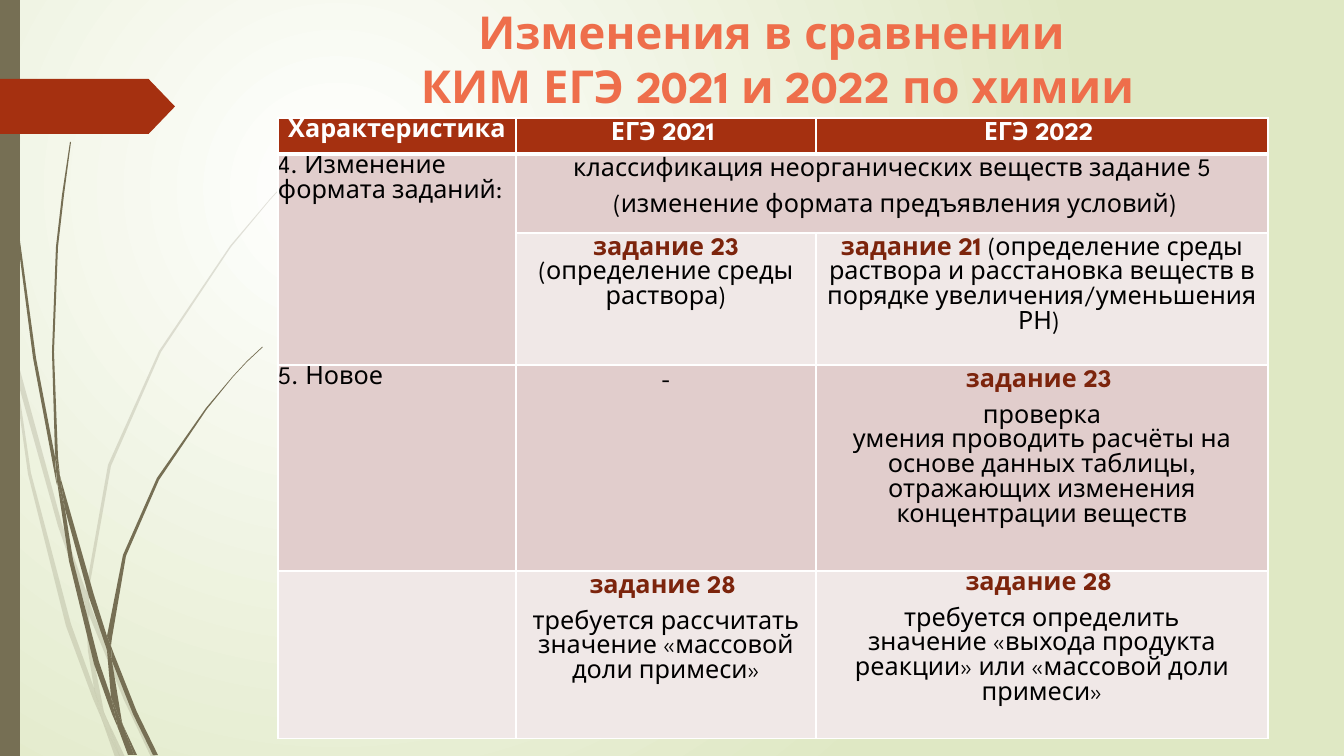
import lxml.etree
import pptx
import pptx.dml.color
import pptx.enum.shapes
import pptx.enum.text
import pptx.oxml.ns
import pptx.util

PX = 914400 / 100.8
FONT = "League Spartan"
COLORS = {
    "white": "FFFFFF", "meadow": "DFE8C4", "stem": "766F54", "rust": "A53010",
    "title": "EE6E4B", "accent": "7C240C", "text": "000000",
    "band_dark": "E1CDCC", "band_light": "F0E8E7",
}
PALE_BLADES = [
    [(11, 353), (9, 325), (0, 284), (0, 301), (10, 347)],
    [(58, 526), (85, 604), (86, 591), (62, 524), (14, 348), (17, 379)],
    [(93, 612), (89, 601), (89, 615), (124, 700), (151, 757), (156, 757), (128, 698)],
    [(120, 757), (125, 757), (106, 717)],
    [(94, 688), (71, 624), (31, 473), (17, 379), (11, 353), (28, 474), (66, 626),
     (93, 699), (102, 720), (100, 713)],
    [(85, 604), (88, 651), (94, 688), (97, 698), (106, 717), (104, 712), (92, 651),
     (89, 615), (89, 613)],
    [(89, 589), (111, 466), (161, 352), (231, 247), (270, 200), (292, 176), (314, 155),
     (314, 154), (291, 176), (270, 199), (230, 246), (159, 351), (108, 465), (86, 589),
     (86, 591), (89, 601)],
    [(102, 720), (115, 757), (120, 757)],
    [(89, 613), (89, 615), (89, 601), (86, 591), (85, 604)],
    [(97, 698), (94, 688), (100, 713), (102, 720), (120, 757), (106, 717)],
]
DARK_BLADES = [
    [(7, 111), (17, 235), (33, 358), (56, 481), (57, 485), (55, 461), (55, 457),
     (36, 358), (19, 234), (8, 110), (5, 48), (4, 0), (3, 0), (4, 48)],
    [(89, 597), (107, 650), (107, 638), (107, 636), (94, 595), (60, 476), (65, 509)],
    [(114, 654), (111, 646), (112, 661), (133, 714), (153, 755), (158, 755), (137, 712)],
    [(111, 697), (99, 662), (73, 560), (65, 509), (57, 481), (69, 561), (94, 664),
     (112, 714), (118, 728), (117, 723)],
    [(60, 476), (58, 457), (54, 352), (58, 247), (64, 195), (71, 142), (70, 142),
     (62, 195), (56, 247), (52, 352), (55, 453)],
    [(134, 755), (137, 755), (123, 725)],
    [(57, 481), (65, 509), (60, 476), (55, 453), (55, 457)],
    [(112, 638), (126, 556), (159, 480), (207, 409), (233, 377), (247, 362), (263, 347),
     (262, 347), (247, 361), (233, 376), (206, 408), (157, 478), (123, 555), (107, 636),
     (111, 646)],
    [(118, 728), (128, 755), (132, 755)],
    [(107, 650), (111, 697), (117, 712), (123, 725), (122, 722), (112, 661), (110, 656)],
    [(107, 650), (110, 656), (112, 661), (111, 646), (107, 636), (107, 638)],
    [(117, 712), (111, 697), (117, 723), (118, 728), (131, 755), (134, 755), (123, 725)],
]
COLUMN_WIDTHS = [238, 300, 452]
ROW_HEIGHTS = [36, 79, 132, 206, 168]
FLUSH_CELLS = {(0, 0), (1, 0), (3, 0), (4, 0), (4, 2)}
CELL_TEXTS = {
    (0, 0): [[("Характеристика", "white")]],
    (0, 1): [[("ЕГЭ 2021 ", "white")]],
    (0, 2): [[("ЕГЭ 2022 ", "white")]],
    (1, 0): [[("4. Изменение формата заданий:", "text")]],
    (1, 1): [[("классификация неорганических веществ задание 5", "text")],
             [(" (изменение формата предъявления условий)", "text")]],
    (2, 1): [[("задание 23 ", "accent"), ("(определение среды раствора)", "text")]],
    (2, 2): [[("задание 21 ", "accent"),
              ("(определение среды раствора и расстановка веществ в порядке "
               "увеличения/уменьшения РН) ", "text")]],
    (3, 0): [[("5. Новое", "text")]],
    (3, 1): [[("-", "text")]],
    (3, 2): [[("задание 23 ", "accent")],
             [("проверка\nумения проводить расчёты на основе данных таблицы,\n"
               "отражающих изменения концентрации веществ", "text")]],
    (4, 1): [[("задание 28 ", "accent")],
             [("требуется рассчитать\nзначение «массовой доли примеси»", "text")]],
    (4, 2): [[("задание 28 ", "accent")],
             [("требуется определить\nзначение «выхода продукта реакции» или "
               "«массовой доли примеси»", "text")]],
}


def px(length):
    return pptx.util.Emu(round(length * PX))


def rgb(name):
    return pptx.dml.color.RGBColor.from_string(COLORS[name])


def add_xml(parent, tag, **attributes):
    return lxml.etree.SubElement(parent, pptx.oxml.ns.qn(tag), attributes)


def paint_background(slide):
    fill = slide.background.fill
    fill.gradient()
    for stop, name in zip(fill.gradient_stops, ("white", "meadow")):
        stop.color.rgb = rgb(name)
    linear = next(slide.element.iter(pptx.oxml.ns.qn("a:lin")))
    gradient = linear.getparent()
    gradient.remove(linear)
    circle = add_xml(gradient, "a:path", path="circle")
    add_xml(circle, "a:fillToRect", l="50000", t="50000", r="100000", b="100000")


def paint_shape(shape, name):
    shape.shadow.inherit = False
    shape.fill.solid()
    shape.fill.fore_color.rgb = rgb(name)
    shape.line.fill.background()


def add_blade(slide, outline, opacity):
    builder = slide.shapes.build_freeform(*outline[0], scale=PX)
    builder.add_line_segments(outline[1:], close=True)
    blade = builder.convert_to_shape()
    paint_shape(blade, "stem")
    if opacity < 100:
        color = next(blade.element.spPr.iter(pptx.oxml.ns.qn("a:srgbClr")))
        add_xml(color, "a:alpha", val=str(opacity * 1000))


def add_block(slide, preset, left, top, width, height, name):
    block = slide.shapes.add_shape(preset, px(left), px(top), px(width), px(height))
    paint_shape(block, name)
    return block


def add_text(paragraph, text, size, name, bold):
    for i, line in enumerate(text.split("\n")):
        if i:
            paragraph.add_line_break()
        run = paragraph.add_run()
        run.text = line
        run.font.name = FONT
        run.font.size = pptx.util.Pt(size)
        run.font.bold = bold
        run.font.color.rgb = rgb(name)


def fill_title(title):
    title.left, title.top, title.width, title.height = px(286), px(0), px(983), px(111)
    frame = title.text_frame
    frame.auto_size = pptx.enum.text.MSO_AUTO_SIZE.NONE
    frame.vertical_anchor = pptx.enum.text.MSO_ANCHOR.MIDDLE
    frame.margin_top = px(12)
    paragraph = frame.paragraphs[0]
    paragraph.alignment = pptx.enum.text.PP_ALIGN.CENTER
    paragraph.line_spacing = pptx.util.Pt(38.5)
    add_text(paragraph, "Изменения в сравнении \nКИМ ЕГЭ 2021 и 2022 по химии", 32.4, "title", True)


def style_cell(cell, row, column):
    properties = cell._tc.get_or_add_tcPr()
    for side in "LRTB":
        heavy = (side == "B" and row == 0) or (side == "T" and row == 1)
        border = add_xml(properties, f"a:ln{side}", w=str(pptx.util.Pt(3 if heavy else 1)))
        add_xml(add_xml(border, "a:solidFill"), "a:srgbClr", val=COLORS["white"])
    band = "rust" if row == 0 else "band_dark" if row % 2 else "band_light"
    cell.fill.solid()
    cell.fill.fore_color.rgb = rgb(band)
    flush = (row, column) in FLUSH_CELLS
    cell.margin_left = cell.margin_right = px(0 if flush else 7)
    cell.margin_top = cell.margin_bottom = px(0 if flush else 3)


def write_cell(cell, paragraphs, centered):
    frame = cell.text_frame
    for i, runs in enumerate(paragraphs):
        paragraph = frame.add_paragraph() if i else frame.paragraphs[0]
        if centered:
            paragraph.alignment = pptx.enum.text.PP_ALIGN.CENTER
        paragraph.line_spacing = 1.07
        paragraph.space_after = pptx.util.Pt(8)
        for text, name in runs:
            add_text(paragraph, text, 18, name, name != "text")


def add_comparison(slide):
    table = slide.shapes.add_table(
        len(ROW_HEIGHTS), len(COLUMN_WIDTHS), px(278), px(118),
        px(sum(COLUMN_WIDTHS)), px(sum(ROW_HEIGHTS))).table
    for column, width in zip(table.columns, COLUMN_WIDTHS):
        column.width = px(width)
    for row, height in zip(table.rows, ROW_HEIGHTS):
        row.height = px(height)
    table.cell(1, 0).merge(table.cell(2, 0))
    table.cell(1, 1).merge(table.cell(1, 2))
    for row in range(len(ROW_HEIGHTS)):
        for column in range(len(COLUMN_WIDTHS)):
            style_cell(table.cell(row, column), row, column)
    for (row, column), paragraphs in CELL_TEXTS.items():
        write_cell(table.cell(row, column), paragraphs, row == 0 or column > 0)


def main():
    presentation = pptx.Presentation()
    presentation.slide_width, presentation.slide_height = px(1344), px(756)
    slide = presentation.slides.add_slide(presentation.slide_layouts[5])
    paint_background(slide)
    for blades, opacity in ((PALE_BLADES, 20), (DARK_BLADES, 100)):
        for outline in blades:
            add_blade(slide, outline, opacity)
    presets = pptx.enum.shapes.MSO_SHAPE
    add_block(slide, presets.RECTANGLE, 0, 0, 20, 756, "stem")
    marker = add_block(slide, presets.PENTAGON, 0, 79, 175, 55, "rust")
    marker.adjustments[0] = 0.48
    fill_title(slide.shapes.title)
    add_comparison(slide)
    presentation.save("out.pptx")


if __name__ == "__main__":
    main()
